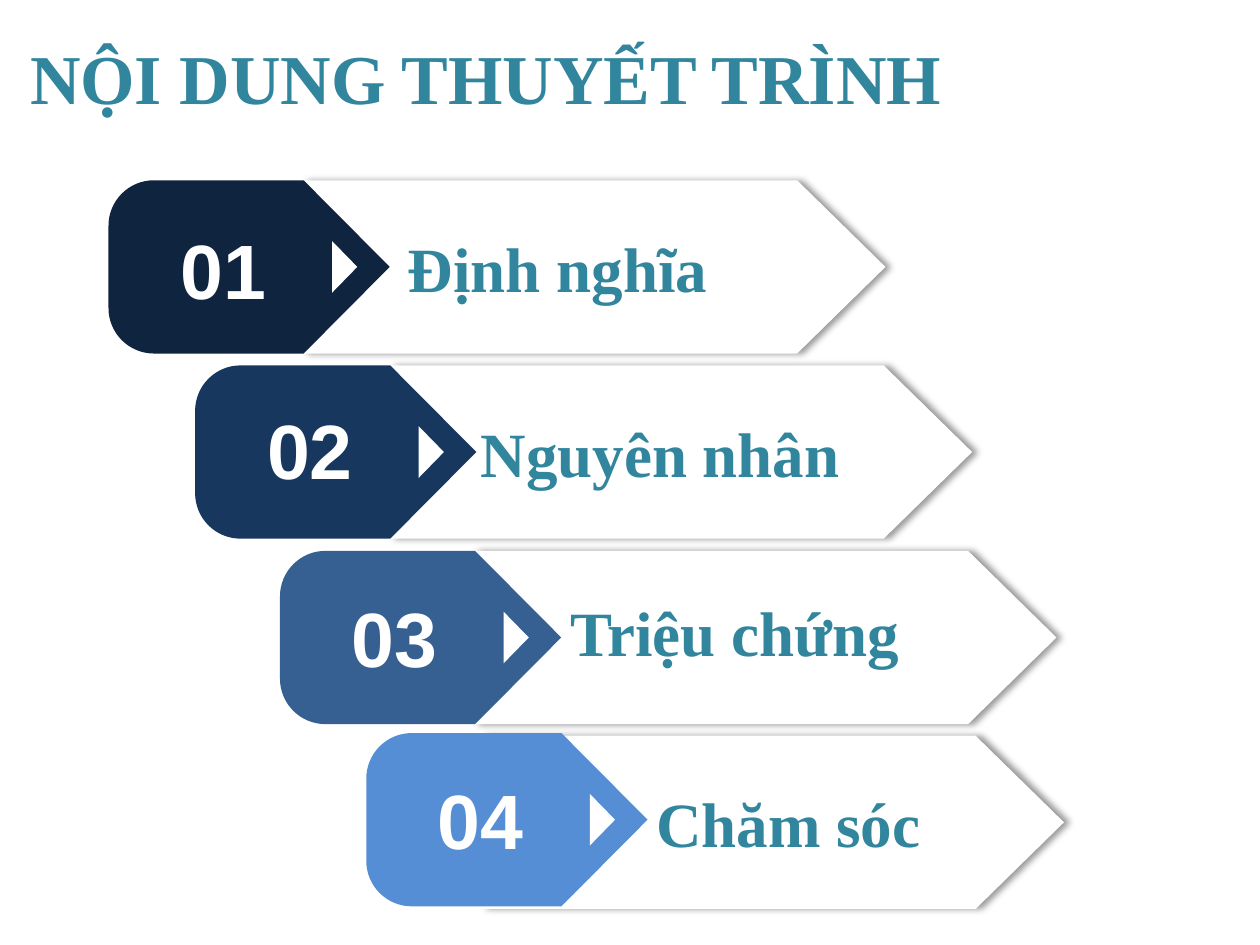
from dataclasses import dataclass
from math import cos, pi, sin

from lxml.etree import SubElement
from pptx import Presentation
from pptx.dml.color import RGBColor
from pptx.enum.shapes import MSO_SHAPE
from pptx.enum.text import MSO_ANCHOR, MSO_AUTO_SIZE, PP_ALIGN
from pptx.oxml.ns import qn
from pptx.util import Pt

WHITE = RGBColor(0xFF, 0xFF, 0xFF)
TEAL = RGBColor(0x31, 0x85, 0x9C)
NAVY = RGBColor(0x0F, 0x24, 0x3E)
DARK_BLUE = RGBColor(0x17, 0x37, 0x5E)
MID_BLUE = RGBColor(0x37, 0x60, 0x92)
LIGHT_BLUE = RGBColor(0x55, 0x8E, 0xD5)

ROW_HEIGHT = 99
PANEL_WIDTH, PANEL_SHOULDER = 333, 282.5
TAB_WIDTH, TAB_SHOULDER, TAB_RADIUS = 160.7, 111.5, 26
ARC_STEPS = 16

TITLE_FONT = {"name": "Times New Roman", "size": Pt(40), "bold": True}
LABEL_FONT = {"name": "Times New Roman", "size": Pt(36), "bold": True}
NUMBER_FONT = {"name": "Arial", "size": Pt(44), "bold": True}


@dataclass
class Row:
    number: str
    label: str
    color: RGBColor
    tab: tuple[float, float]
    panel: tuple[float, float]
    number_at: tuple[float, float]
    label_at: tuple[float, float]


ROWS = [
    Row("01", "Định nghĩa", NAVY, (62, 103), (173, 103), (95.8, 123.1), (226, 127.4)),
    Row("02", "Nguyên nhân", DARK_BLUE, (111.5, 208.8), (222.5, 208.8),
        (145.2, 226.4), (267.6, 232.9)),
    Row("03", "Triệu chứng", MID_BLUE, (160, 314.8), (270.7, 314.8),
        (193.2, 333.8), (318.8, 335.3)),
    Row("04", "Chăm sóc", LIGHT_BLUE, (209.3, 418.9), (275, 420.4),
        (242.6, 437.8), (367.8, 444.5)),
]


def format_run(run, color: RGBColor, font_format: dict) -> None:
    for name, value in font_format.items():
        setattr(run.font, name, value)
    run.font.color.rgb = color


def paint(shape, color: RGBColor) -> None:
    shape.shadow.inherit = False
    shape.fill.solid()
    shape.fill.fore_color.rgb = color
    shape.line.fill.background()


def add_outline(slide, origin: tuple[float, float], points: list, color: RGBColor):
    left, top = origin
    vertices = [(Pt(left + x), Pt(top + y)) for x, y in points]
    builder = slide.shapes.build_freeform(*vertices[0])
    builder.add_line_segments(vertices[1:], close=True)
    shape = builder.convert_to_shape()
    paint(shape, color)
    return shape


def add_panel(slide, row: Row) -> None:
    points = [(0, 0), (PANEL_SHOULDER, 0), (PANEL_WIDTH, ROW_HEIGHT / 2),
              (PANEL_SHOULDER, ROW_HEIGHT), (0, ROW_HEIGHT)]
    shape = add_outline(slide, row.panel, points, WHITE)
    effects = shape._element.spPr.find(qn("a:effectLst"))
    shadow = SubElement(effects, qn("a:outerShdw"), blurRad=str(Pt(4)),
                        dist=str(Pt(3)), dir="0", algn="l", rotWithShape="0")
    color = SubElement(shadow, qn("a:srgbClr"), val="000000")
    SubElement(color, qn("a:alpha"), val="40000")


def corner(center_y: float, start: float) -> list:
    angles = [start + pi / 2 * step / ARC_STEPS for step in range(ARC_STEPS + 1)]
    return [(TAB_RADIUS * (1 + cos(angle)), center_y + TAB_RADIUS * sin(angle))
            for angle in angles]


def add_tab(slide, row: Row) -> None:
    points = [(TAB_SHOULDER, 0), (TAB_WIDTH, ROW_HEIGHT / 2), (TAB_SHOULDER, ROW_HEIGHT),
              *corner(ROW_HEIGHT - TAB_RADIUS, pi / 2), *corner(TAB_RADIUS, pi)]
    add_outline(slide, row.tab, points, row.color)
    left, top = row.tab
    triangle = slide.shapes.add_shape(MSO_SHAPE.ISOSCELES_TRIANGLE, Pt(left + 120.2),
                                      Pt(top + 42.3), Pt(29.5), Pt(14.4))
    triangle.rotation = 90
    paint(triangle, WHITE)


def add_text(slide, text: str, origin: tuple[float, float], size: tuple[float, float],
             color: RGBColor, font_format: dict, frame_format: dict,
             alignment: PP_ALIGN) -> None:
    box = slide.shapes.add_textbox(*map(Pt, origin + size))
    for name, value in frame_format.items():
        setattr(box.text_frame, name, value)
    paragraph = box.text_frame.paragraphs[0]
    paragraph.alignment = alignment
    run = paragraph.add_run()
    run.text = text
    format_run(run, color, font_format)


def add_row(slide, row: Row) -> None:
    add_panel(slide, row)
    add_tab(slide, row)
    frame_format = {"vertical_anchor": MSO_ANCHOR.MIDDLE,
                    "auto_size": MSO_AUTO_SIZE.SHAPE_TO_FIT_TEXT}
    add_text(slide, row.number, row.number_at, (64, 60.5), WHITE, NUMBER_FONT,
             frame_format | {"word_wrap": False}, PP_ALIGN.CENTER)
    add_text(slide, row.label, row.label_at, (267, 51), TEAL, LABEL_FONT,
             frame_format | {"word_wrap": True}, PP_ALIGN.LEFT)


def add_title(slide, text: str) -> None:
    title = slide.shapes.title
    placement = {"left": Pt(0), "top": Pt(1.4), "width": Pt(720), "height": Pt(84.2)}
    for name, value in placement.items():
        setattr(title, name, value)
    frame = title.text_frame
    frame.vertical_anchor = MSO_ANCHOR.MIDDLE
    frame.margin_left = Pt(17.2)
    paragraph = frame.paragraphs[0]
    paragraph.alignment = PP_ALIGN.LEFT
    run = paragraph.add_run()
    run.text = text
    format_run(run, TEAL, TITLE_FONT)


def main() -> None:
    presentation = Presentation()
    presentation.slide_width = Pt(720)
    presentation.slide_height = Pt(540)
    slide = presentation.slides.add_slide(presentation.slide_layouts[5])
    add_title(slide, "NỘI DUNG THUYẾT TRÌNH")
    for row in ROWS:
        add_row(slide, row)
    presentation.save("out.pptx")


if __name__ == "__main__":
    main()
